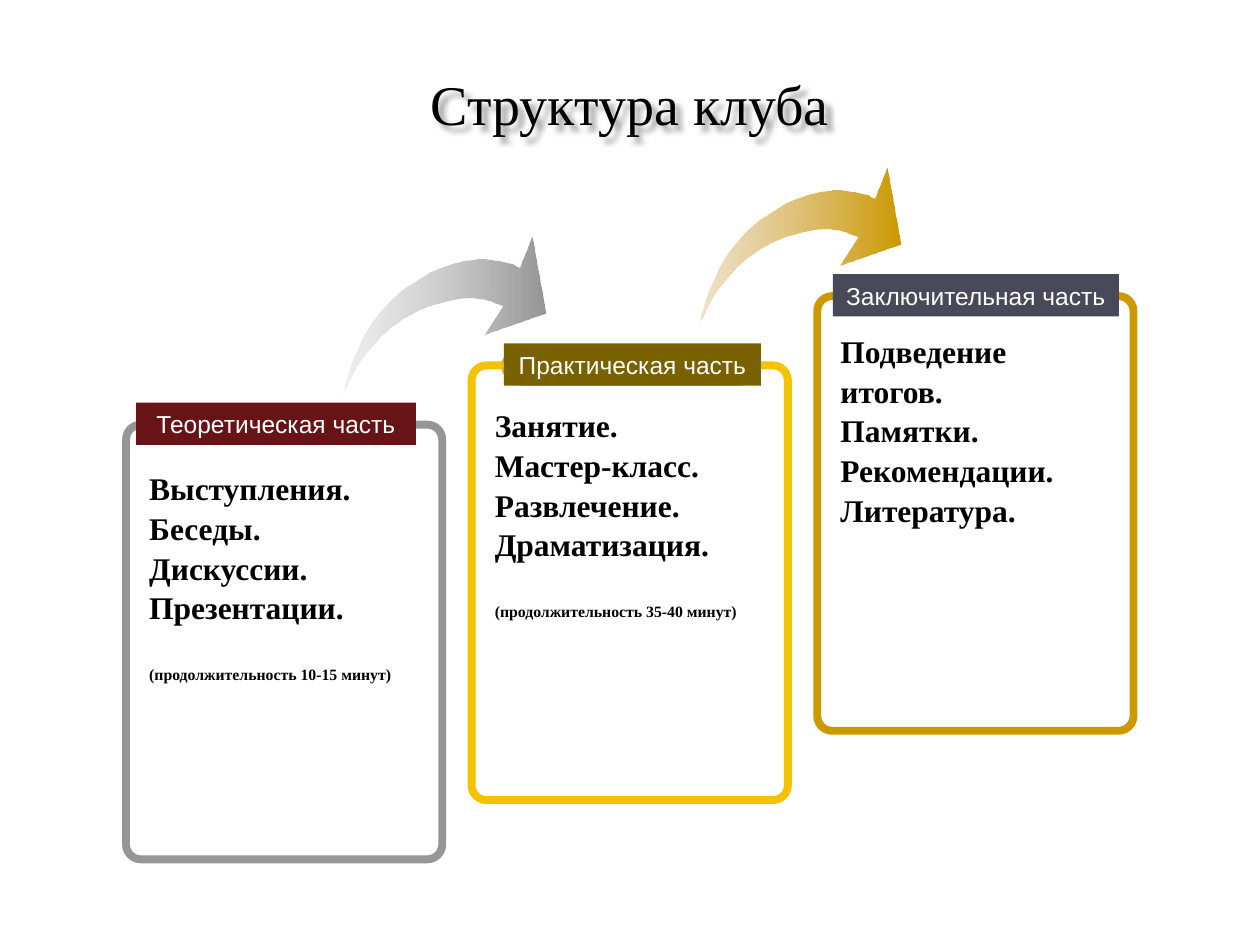
"""Build the slide about the three parts of a club meeting."""
from dataclasses import dataclass

from lxml.etree import SubElement
from pptx import Presentation
from pptx.dml.color import RGBColor
from pptx.enum.shapes import MSO_SHAPE
from pptx.enum.text import MSO_ANCHOR, MSO_AUTO_SIZE, PP_ALIGN
from pptx.oxml.ns import qn
from pptx.util import Pt

BLACK = RGBColor(0x00, 0x00, 0x00)
WHITE = RGBColor(0xFF, 0xFF, 0xFF)
GREY = RGBColor(0x96, 0x96, 0x96)
DARK_GREY = RGBColor(0x63, 0x63, 0x63)
LIGHT_GREY = RGBColor(0xCB, 0xCB, 0xCB)
YELLOW = RGBColor(0xF5, 0xC2, 0x01)
DARK_YELLOW = RGBColor(0xAF, 0x8B, 0x01)
GOLD = RGBColor(0xCC, 0x99, 0x00)
DARK_GOLD = RGBColor(0x92, 0x6D, 0x00)
LIGHT_GOLD = RGBColor(0xD1, 0xA6, 0x5A)
MAROON = RGBColor(0x68, 0x14, 0x17)
OLIVE = RGBColor(0x7A, 0x61, 0x00)
SLATE = RGBColor(0x48, 0x4A, 0x5A)

SERIF = "Times New Roman"
SANS = "Arial"
CARD_WIDTH, CARD_HEIGHT = 180.72, 248.4
ARROW_UNIT = 0.72
ARROW_OUTLINE = [
    (0, 127), (0, 126), (1, 123), (2, 120), (5, 114), (8, 108), (12, 101), (17, 94),
    (23, 87), (30, 79), (38, 72), (48, 65), (59, 59), (69, 55), (80, 52), (89, 50),
    (97, 49), (104, 49), (111, 50), (116, 51), (120, 53), (123, 54), (126, 55),
    (111, 78), (160, 61), (149, 0), (139, 25), (137, 24), (134, 22), (130, 21),
    (125, 20), (119, 19), (113, 18), (105, 18), (97, 19), (88, 21), (79, 24),
    (69, 28), (58, 35), (47, 42), (37, 51), (29, 60), (22, 69), (16, 79), (12, 88),
    (8, 97), (5, 105), (3, 112), (1, 118), (1, 123), (0, 126),
]


@dataclass(frozen=True)
class Part:
    heading: str
    activities: list[str]
    duration: str
    left: float
    top: float
    heading_left: float
    heading_width: float
    list_drop: float
    heading_color: RGBColor
    edge: RGBColor
    dark_edge: RGBColor


@dataclass(frozen=True)
class Arrow:
    left: float
    top: float
    tail: RGBColor
    tip: RGBColor


PARTS = [
    Part("Теоретическая часть",
         ["Выступления.", "Беседы.", "Дискуссии.", "Презентации."],
         "(продолжительность 10-15 минут)",
         72, 242.64, 77.76, 159.84, 20.88, MAROON, GREY, DARK_GREY),
    Part("Практическая часть",
         ["Занятие.", "Мастер-класс.", "Развлечение.", "Драматизация."],
         "(продолжительность 35-40 минут)",
         269.5, 208.8, 288, 146.88, 18.72, OLIVE, YELLOW, DARK_YELLOW),
    Part("Заключительная часть",
         ["Подведение итогов.", "Памятки.", "Рекомендации.", "Литература."],
         "",
         467, 169.2, 475.92, 163.44, 15.84, SLATE, GOLD, DARK_GOLD),
]
ARROWS = [
    Arrow(196.56, 135.36, LIGHT_GREY, GREY),
    Arrow(399.6, 95.76, LIGHT_GOLD, GOLD),
]


def write(paragraph, text: str, *, size: float, font: str, color: RGBColor,
          bold: bool = False, align=PP_ALIGN.LEFT, before: float = 0,
          spacing: float = 1.0) -> None:
    paragraph.alignment = align
    paragraph.space_before = Pt(before)
    paragraph.line_spacing = spacing
    run = paragraph.add_run()
    run.text = text
    run.font.size = Pt(size)
    run.font.name = font
    run.font.bold = bold
    run.font.color.rgb = color


def fill_gradient(shape, colors: list[RGBColor], angle: int, first_alpha: int = 100) -> None:
    shape.fill.gradient()
    shape.fill.gradient_angle = angle
    stops = shape._element.spPr.find(qn("a:gradFill")).find(qn("a:gsLst"))
    for stop in list(stops):
        stops.remove(stop)
    for index, color in enumerate(colors):
        position = 100000 * index // (len(colors) - 1)
        stop = SubElement(stops, qn("a:gs"), pos=str(position))
        tint = SubElement(stop, qn("a:srgbClr"), val=str(color))
        if index == 0 and first_alpha < 100:
            SubElement(tint, qn("a:alpha"), val=str(first_alpha * 1000))


def add_box(slide, kind, left: float, top: float, width: float, height: float):
    box = slide.shapes.add_shape(kind, Pt(left), Pt(top), Pt(width), Pt(height))
    box.shadow.inherit = False
    box.line.fill.background()
    return box


def add_title(slide, text: str) -> None:
    title = slide.shapes.title
    title.left, title.top, title.width, title.height = Pt(36), Pt(21.6), Pt(648), Pt(74.16)
    title.text_frame.vertical_anchor = MSO_ANCHOR.MIDDLE
    write(title.text_frame.paragraphs[0], text, size=32, font=SERIF, color=BLACK,
          align=PP_ALIGN.CENTER)
    effects = SubElement(title._element.spPr, qn("a:effectLst"))
    shadow = SubElement(effects, qn("a:outerShdw"), blurRad=str(Pt(3)), dist=str(Pt(4)),
                        dir="2700000", algn="tl", rotWithShape="0")
    shade = SubElement(shadow, qn("a:srgbClr"), val=str(BLACK))
    SubElement(shade, qn("a:alpha"), val="40000")


def add_arrow(slide, arrow: Arrow) -> None:
    start, *rest = ARROW_OUTLINE
    builder = slide.shapes.build_freeform(*start, scale=Pt(ARROW_UNIT))
    builder.add_line_segments(rest, close=True)
    curve = builder.convert_to_shape(Pt(arrow.left), Pt(arrow.top))
    curve.shadow.inherit = False
    curve.line.fill.background()
    fill_gradient(curve, [arrow.tail, arrow.tip], 0, first_alpha=32)


def add_part(slide, part: Part) -> None:
    card = add_box(slide, MSO_SHAPE.ROUNDED_RECTANGLE, part.left, part.top,
                   CARD_WIDTH, CARD_HEIGHT)
    card.adjustments[0] = 0.047
    card.fill.background()
    card.line.color.rgb = part.edge
    card.line.width = Pt(4.5)

    tab = add_box(slide, MSO_SHAPE.ROUNDED_RECTANGLE, part.left + 17.5, part.top - 10.8,
                  146.88, 22.32)
    tab.adjustments[0] = 0.5
    fill_gradient(tab, [part.dark_edge, part.edge, part.dark_edge], 90)

    heading = add_box(slide, MSO_SHAPE.RECTANGLE, part.heading_left, part.top - 12.6,
                      part.heading_width, 24.2)
    heading.fill.solid()
    heading.fill.fore_color.rgb = part.heading_color
    heading.text_frame.word_wrap = False
    heading.text_frame.vertical_anchor = MSO_ANCHOR.MIDDLE
    write(heading.text_frame.paragraphs[0], part.heading, size=14, font=SANS,
          color=WHITE, align=PP_ALIGN.CENTER)

    activities = slide.shapes.add_textbox(Pt(part.left + 6.2), Pt(part.top + part.list_drop),
                                          Pt(167.76), Pt(127.44)).text_frame
    activities.word_wrap = True
    activities.auto_size = MSO_AUTO_SIZE.SHAPE_TO_FIT_TEXT
    for index, activity in enumerate(part.activities):
        paragraph = activities.add_paragraph() if index else activities.paragraphs[0]
        write(paragraph, activity, size=18, font=SERIF, color=BLACK, bold=True, spacing=1.05)
    if part.duration:
        write(activities.add_paragraph(), part.duration, size=9, font=SERIF, color=BLACK,
              bold=True, before=21.7, spacing=1.05)


def main() -> None:
    presentation = Presentation()
    presentation.slide_width, presentation.slide_height = Pt(720), Pt(540)
    slide = presentation.slides.add_slide(presentation.slide_layouts[5])
    add_title(slide, "Структура клуба")
    for arrow in ARROWS:
        add_arrow(slide, arrow)
    for part in PARTS:
        add_part(slide, part)
    presentation.save("out.pptx")


if __name__ == "__main__":
    main()
